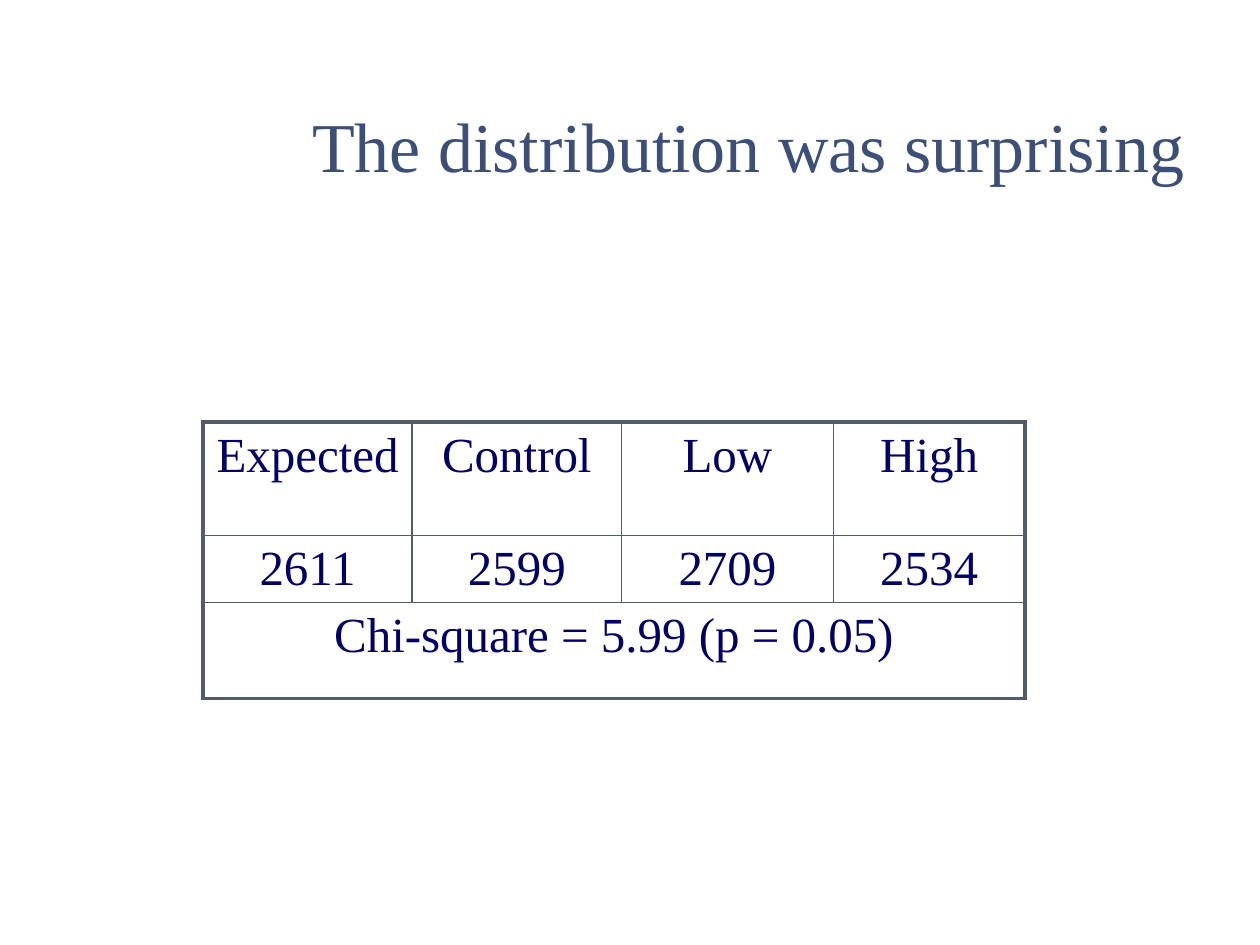
import lxml.etree
import pptx
import pptx.dml.color
import pptx.enum.text
import pptx.oxml.ns
import pptx.util

Cm = pptx.util.Cm
Pt = pptx.util.Pt
ALIGN = pptx.enum.text.PP_ALIGN
FONT = "Times New Roman"
RULE = "535B6B"
OUTER, INNER = 2.25, 1
COLUMNS = (4.22, 4.22, 4.27, 3.86)
ROWS = (2.29, 1.32, 1.93)
COUNTS = (
    ("Expected", "Control", "Low", "High"),
    ("2611", "2599", "2709", "2534"),
)
TEST_RESULT = "Chi-square = 5.99 (p = 0.05)"


def colour(value):
    return pptx.dml.color.RGBColor.from_string(value)


def add_child(parent, tag, **attributes):
    child = lxml.etree.SubElement(parent, pptx.oxml.ns.qn(tag))
    for name, value in attributes.items():
        child.set(name, str(value))
    return child


def write(para, text, size, ink, align):
    para.alignment = align
    span = para.add_run()
    span.text = text
    span.font.name = FONT
    span.font.size = Pt(size)
    span.font.color.rgb = colour(ink)


def set_space_before(para, percent):
    """Set spacing relative to the text size, which needs XML."""
    properties = para._p.get_or_add_pPr()
    space = add_child(properties, "a:spcBef")
    add_child(space, "a:spcPct", val=percent * 1000)
    properties.insert(0, space)


def set_borders(cell, left, right, top, bottom):
    properties = cell._tc.get_or_add_tcPr()
    widths = {"a:lnL": left, "a:lnR": right, "a:lnT": top, "a:lnB": bottom}
    for tag, width in widths.items():
        line = add_child(properties, tag, w=int(Pt(width)))
        add_child(add_child(line, "a:solidFill"), "a:srgbClr", val=RULE)


def fill_title(page, left, top, width, height):
    box = page.shapes.title
    box.left, box.top, box.width, box.height = map(Cm, (left, top, width, height))
    frame = box.text_frame
    frame.word_wrap = True
    frame.auto_size = pptx.enum.text.MSO_AUTO_SIZE.NONE
    frame.vertical_anchor = pptx.enum.text.MSO_ANCHOR.BOTTOM
    write(frame.paragraphs[0], "The distribution was surprising", 40, "3C4F78", ALIGN.RIGHT)


def add_counts_table(page, left, top):
    frame = page.shapes.add_table(
        len(ROWS), len(COLUMNS), Cm(left), Cm(top), Cm(sum(COLUMNS)), Cm(sum(ROWS))
    )
    table = frame.table
    table.first_row = table.horz_banding = False
    for column, width in zip(table.columns, COLUMNS):
        column.width = Cm(width)
    for row, height in zip(table.rows, ROWS):
        row.height = Cm(height)

    last_row, last_column = len(ROWS) - 1, len(COLUMNS) - 1
    table.cell(last_row, 0).merge(table.cell(last_row, last_column))
    for r, texts in enumerate((*COUNTS, (TEST_RESULT,))):
        for c, text in enumerate(texts):
            cell = table.cell(r, c)
            reaches_right = c == last_column or cell.is_merge_origin
            set_borders(
                cell,
                left=OUTER if c == 0 else INNER,
                right=OUTER if reaches_right else INNER,
                top=OUTER if r == 0 else INNER,
                bottom=OUTER if r == last_row else INNER,
            )
            cell.fill.background()
            para = cell.text_frame.paragraphs[0]
            write(para, text, 28, "000066", ALIGN.CENTER)
            set_space_before(para, 20)


def main():
    deck = pptx.Presentation()
    deck.slide_width, deck.slide_height = Cm(25.4), Cm(19.05)
    page = deck.slides.add_slide(deck.slide_layouts[5])
    page.background.fill.solid()
    page.background.fill.fore_color.rgb = colour("FFFFFF")
    fill_title(page, 1.27, 0.71, 22.86, 3.18)
    add_counts_table(page, 4.09, 8.51)
    deck.save("out.pptx")


if __name__ == "__main__":
    main()
